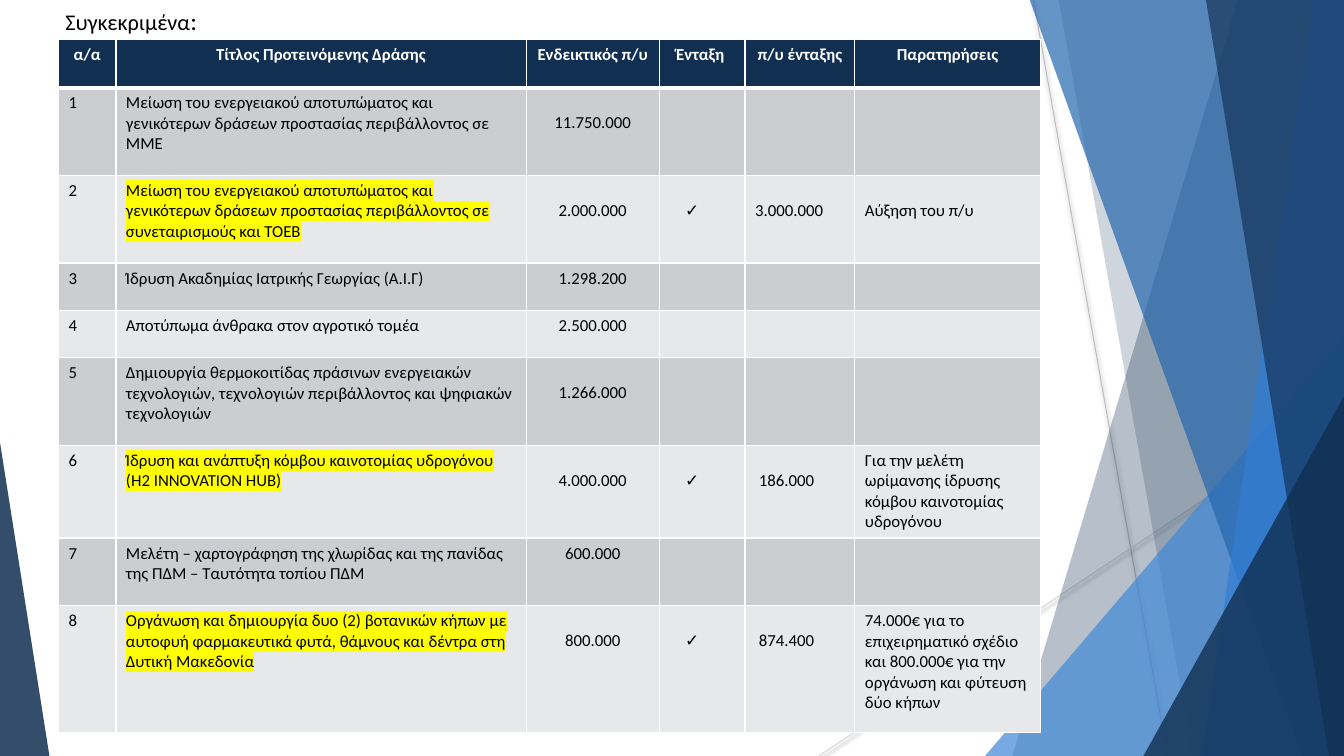
from lxml.etree import SubElement
from pptx import Presentation
from pptx.dml.color import RGBColor
from pptx.enum.shapes import MSO_CONNECTOR, MSO_SHAPE
from pptx.enum.text import PP_ALIGN
from pptx.oxml.ns import qn
from pptx.util import Inches, Pt

WIDTH, HEIGHT = 13.33, 7.5
FONT = "Calibri"
NAVY, WHITE, BLACK, YELLOW = "112F51", "FFFFFF", "000000", "FFFF00"
BANDS = ("CCCDD0", "E7E8E9")
LINE_STEP = 0.2  # height of one line of table text

COLUMNS = (0.57, 4.07, 1.32, 0.85, 1.09, 1.84)
ROWS = (0.48, 0.87, 0.87, 0.47, 0.47, 0.87, 0.92, 0.67, 1.26)
HEADERS = ("α/α", "Τίτλος Προτεινόμενης Δράσης", "Ενδεικτικός π/υ",
           "Ένταξη ", "π/υ ένταξης", "Παρατηρήσεις")
# title, indicative budget, included budget, remarks
ACTIONS = (
    ("Μείωση του ενεργειακού αποτυπώματος και γενικότερων δράσεων προστασίας "
     "περιβάλλοντος σε ΜΜΕ", "11.750.000", "", ""),
    ("Μείωση του ενεργειακού αποτυπώματος και γενικότερων δράσεων προστασίας "
     "περιβάλλοντος σε συνεταιρισμούς και ΤΟΕΒ",
     "2.000.000", "3.000.000", "Αύξηση του π/υ"),
    ("Ίδρυση Ακαδημίας Ιατρικής Γεωργίας (Α.Ι.Γ)", "1.298.200", "", ""),
    ("Αποτύπωμα άνθρακα στον αγροτικό τομέα", "2.500.000", "", ""),
    ("Δημιουργία θερμοκοιτίδας πράσινων ενεργειακών τεχνολογιών, τεχνολογιών "
     "περιβάλλοντος και ψηφιακών τεχνολογιών", "1.266.000", "", ""),
    ("Ίδρυση και ανάπτυξη κόμβου καινοτομίας υδρογόνου (H2 INNOVATION HUB)",
     "4.000.000", " 186.000",
     "Για την μελέτη ωρίμανσης ίδρυσης κόμβου καινοτομίας υδρογόνου"),
    ("Μελέτη – χαρτογράφηση της χλωρίδας και της πανίδας της ΠΔΜ – "
     "Ταυτότητα τοπίου ΠΔΜ", "600.000", "", ""),
    ("Οργάνωση και δημιουργία δυο (2) βοτανικών κήπων με αυτοφυή φαρμακευτικά "
     "φυτά, θάμνους και δέντρα στη Δυτική Μακεδονία", "800.000", " 874.400",
     "74.000€ για το επιχειρηματικό σχέδιο και 800.000€ για την οργάνωση και "
     "φύτευση δύο κήπων"),
)


def rgb(color):
    return RGBColor.from_string(color)


def add_color(parent, color, alpha=100):
    """Append an a:srgbClr element with its opacity in percent."""
    clr = SubElement(parent, qn("a:srgbClr"), val=color)
    if alpha < 100:
        SubElement(clr, qn("a:alpha"), val=str(alpha * 1000))


def paint(sp, color, alpha):
    sp.shadow.inherit = False
    sp.line.fill.background()
    sp.fill.solid()
    sp.fill.fore_color.rgb = rgb(color)
    clr = sp.fill._xPr.find(qn("a:solidFill"))[0]
    SubElement(clr, qn("a:alpha"), val=str(alpha * 1000))


def add_ray(slide, start, end, color):
    """Thin line with a soft shadow below it."""
    line = slide.shapes.add_connector(
        MSO_CONNECTOR.STRAIGHT, *(Inches(v) for v in start + end))
    line.line.color.rgb = rgb(color)
    line.line.width = Pt(0.75)
    effects = SubElement(line._element.spPr, qn("a:effectLst"))
    shadow = SubElement(effects, qn("a:outerShdw"), blurRad=str(Pt(3)),
                        dist=str(Pt(2)), dir="5400000", rotWithShape="0")
    add_color(shadow, BLACK, 40)


def add_shard(slide, top_left, bottom_left, color, alpha):
    """Full-height band from a slanted left side to the slide's right edge."""
    top = -0.01
    points = [(top_left, top), (WIDTH, top), (WIDTH, HEIGHT), (bottom_left, HEIGHT)]
    points = [(Inches(x), Inches(y)) for x, y in points]
    builder = slide.shapes.build_freeform(*points[0])
    builder.add_line_segments(points[1:], close=True)
    paint(builder.convert_to_shape(), color, alpha)


def add_corner(slide, left, right, top, apex, color, alpha):
    """Triangle standing on the slide's bottom edge."""
    sp = slide.shapes.add_shape(
        MSO_SHAPE.ISOSCELES_TRIANGLE, Inches(left), Inches(top),
        Inches(right - left), Inches(HEIGHT - top))
    sp.adjustments[0] = apex
    paint(sp, color, alpha)


def add_backdrop(slide):
    add_ray(slide, (10.25, 0), (11.58, HEIGHT), "BFBFBF")
    add_ray(slide, (WIDTH, 4.03), (8.12, HEIGHT), "D9D9D9")
    add_shard(slide, 12.28, 10.04, NAVY, 30)
    add_shard(slide, 10.5, 11.83, NAVY, 20)
    add_corner(slide, 9.77, WIDTH, 3.33, 1, "438AD7", 72)
    add_shard(slide, 10.21, 12.91, "2567AE", 70)
    add_shard(slide, 13.03, 11.92, "337ED4", 70)
    add_shard(slide, 11.96, 13.18, NAVY, 65)
    add_corner(slide, 11.34, WIDTH, 3.93, 1, NAVY, 80)
    add_corner(slide, 0, 0.49, 4.39, 0, NAVY, 85)


def style_run(r, size, color=BLACK, bold=False, highlight=None):
    r.font.size = Pt(size)
    r.font.bold = bold
    r.font.color.rgb = rgb(color)
    if highlight:
        add_color(SubElement(r._r.get_or_add_rPr(), qn("a:highlight")), highlight)
    r.font.name = FONT


def set_borders(cell, top, bottom):
    tc_pr = cell._tc.get_or_add_tcPr()
    for side, width in (("L", 1), ("R", 1), ("T", top), ("B", bottom)):
        ln = SubElement(tc_pr, qn(f"a:ln{side}"), w=str(Pt(width)))
        add_color(SubElement(ln, qn("a:solidFill")), WHITE)


def fill_cell(cell, text, fill, centred=False, lowered=False, **font):
    cell.fill.solid()
    cell.fill.fore_color.rgb = rgb(fill)
    if lowered:
        cell.margin_top = Inches(0.05 + LINE_STEP)
    p = cell.text_frame.paragraphs[0]
    p.text = text
    p.alignment = PP_ALIGN.CENTER if centred else PP_ALIGN.LEFT
    p.font.size = Pt(12)
    for r in p.runs:
        style_run(r, 12, **font)


def add_actions_table(slide):
    table = slide.shapes.add_table(
        len(ROWS), len(COLUMNS), Inches(0.58), Inches(0.39),
        Inches(sum(COLUMNS)), Inches(sum(ROWS))).table
    for column, width in zip(table.columns, COLUMNS):
        column.width = Inches(width)
    for i, height in enumerate(ROWS):
        table.rows[i].height = Inches(height)
        for cell in table.rows[i].cells:
            set_borders(cell, 3 if i == 1 else 1, 3 if i == 0 else 1)
    for cell, header in zip(table.rows[0].cells, HEADERS):
        fill_cell(cell, header, NAVY, centred=True, color=WHITE, bold=True)

    for i, (title, budget, included, remarks) in enumerate(ACTIONS, 1):
        fill = BANDS[(i - 1) % 2]
        tall = ROWS[i] > 0.8
        number, name, amount, check, granted, note = table.rows[i].cells
        fill_cell(number, str(i), fill)
        fill_cell(name, title, fill, highlight=YELLOW if included else None)
        fill_cell(amount, budget, fill, centred=True, lowered=tall)
        fill_cell(check, "✓" if included else "", fill, centred=True, lowered=tall)
        check.margin_right = Inches(0.3)
        fill_cell(granted, included, fill, lowered=tall)
        fill_cell(note, remarks, fill, lowered=tall and len(remarks) < 20)


def add_heading(slide):
    box = slide.shapes.add_textbox(Inches(0.55), 0, Inches(3.08), Inches(0.4))
    tf = box.text_frame
    tf.word_wrap = True
    for text, size in (("Συγκεκριμένα", 16), (":", 18)):
        r = tf.paragraphs[0].add_run()
        r.text = text
        style_run(r, size)


def main():
    prs = Presentation()
    prs.slide_width, prs.slide_height = Inches(WIDTH), Inches(HEIGHT)
    slide = prs.slides.add_slide(prs.slide_layouts[6])
    add_backdrop(slide)
    add_actions_table(slide)
    add_heading(slide)
    prs.save("out.pptx")


if __name__ == "__main__":
    main()
